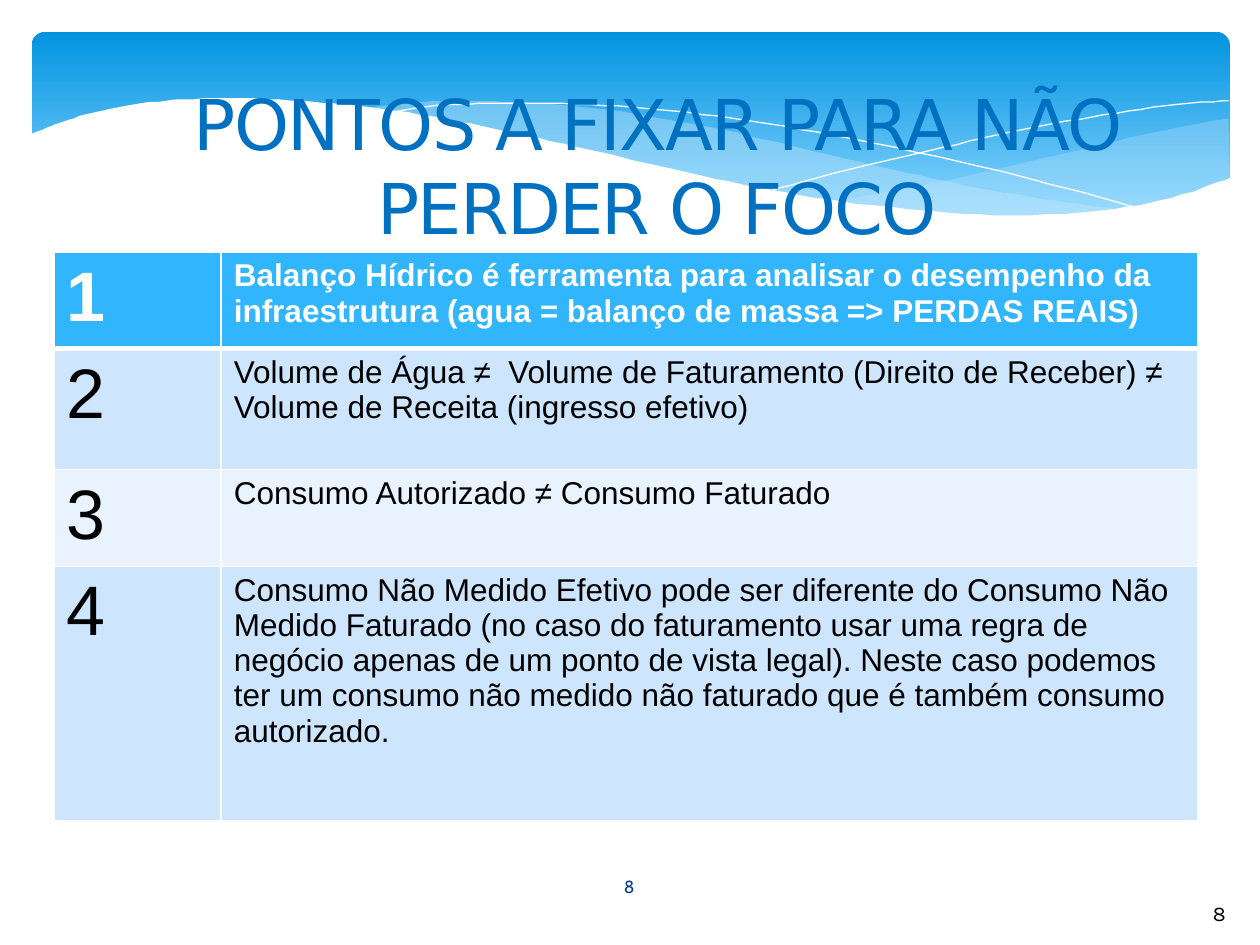
from dataclasses import dataclass
from lxml import etree
from pptx import Presentation
from pptx import util as u
from pptx.dml.color import RGBColor
from pptx.enum import shapes, text
from pptx.oxml import ns


@dataclass(frozen=True)
class Theme:
    white: str = "FFFFFF"
    black: str = "000000"
    title: str = "0070C0"
    navy: str = "073E87"
    deep: str = "0293E0"
    sky: str = "83D3FE"
    mist: str = "C6E7FC"
    head: str = "31B6FD"
    bands: tuple = ("CEE5FE", "E8F3FF")
    big: int = 40
    body: int = 18
    page: int = 12
    foot: int = 10


T = Theme()
UNIT = 0.0254  # wave points are hundredths of an inch, in cm

# Each wave is a list of curves, each curve a list of knots
BACK = [
    [(975, 94), (921, 104), (861, 118), (779, 137), (706, 152), (661, 160)],
    [(661, 160), (719, 167), (781, 172), (835, 172), (889, 166),
     (942, 154), (976, 141)],
]
FRONT = [
    [(893, 167), (837, 159), (775, 149), (706, 134), (629, 116), (569, 102),
     (502, 90), (442, 83), (380, 80), (328, 81), (286, 86)],
    [(286, 86), (342, 94), (404, 106), (449, 116), (530, 135), (601, 150),
     (665, 161), (722, 168), (785, 172), (838, 172), (893, 167)],
]
FALL = [[(309, 90), (344, 84), (401, 82), (469, 83), (533, 88), (608, 98),
         (695, 114), (795, 136), (907, 166)]]
RISE = [[(613, 151), (672, 135), (748, 117), (806, 104), (866, 93),
         (924, 84), (975, 80)]]
COVER = [
    [(977, 141), (930, 157), (875, 167), (809, 171), (744, 168), (668, 160),
     (603, 149), (529, 133), (447, 114), (391, 102), (340, 92), (292, 85),
     (250, 81), (193, 78), (146, 79), (106, 83), (76, 89), (52, 96),
     (36, 102), (23, 107)],
    [(23, 107), (23, 224)],
    [(23, 224), (977, 224)],
]

ROWS = [
    (1.9, "Balanço Hídrico é ferramenta para analisar o desempenho da "
          "infraestrutura (agua = balanço de massa => PERDAS REAIS)"),
    (2.44, "Volume de Água ≠  Volume de Faturamento (Direito de Receber) ≠ "
           "Volume de Receita (ingresso efetivo)"),
    (1.83, "Consumo Autorizado ≠ Consumo Faturado"),
    (5.13, "Consumo Não Medido Efetivo pode ser diferente do Consumo Não "
           "Medido Faturado (no caso do faturamento usar uma regra de negócio "
           "apenas de um ponto de vista legal). Neste caso podemos ter um "
           "consumo não medido não faturado que é também consumo autorizado."),
]


def rgb(code):
    return RGBColor.from_string(code)


def put(item, vals):
    for name, val in vals.items():
        setattr(item, name, val)


def place(*box):
    return [u.Cm(n) for n in box]


def write(frame, words, size, face, color, align, bold=False):
    para = frame.paragraphs[0]
    para.alignment = align
    run = para.add_run()
    run.text = words
    put(run.font, {"size": u.Pt(size), "name": face, "bold": bold})
    run.font.color.rgb = rgb(color)
    return run


def smooth(knots, steps=6):
    """Sample a Catmull-Rom curve through the knots."""
    ends = [knots[0], *knots, knots[-1]]
    dots = [knots[0]]
    for a, b, c, d in zip(ends, ends[1:], ends[2:], ends[3:]):
        for i in range(1, steps + 1):
            t = i / steps
            dots.append(tuple(
                0.5 * (2 * q + (r - p) * t
                       + (2 * p - 5 * q + 4 * r - s) * t ** 2
                       + (3 * q - p - 3 * r + s) * t ** 3)
                for p, q, r, s in zip(a, b, c, d)))
    return dots


def wave(slide, curves, fill=None, alpha=100):
    """Draw a filled wave, or a white hairline when no fill is given."""
    dots = [dot for knots in curves for dot in smooth(knots)]
    pen = slide.shapes.build_freeform(*dots[0], scale=u.Cm(UNIT))
    pen.add_line_segments(dots[1:], close=fill is not None)
    shape = pen.convert_to_shape()
    shape.shadow.inherit = False
    if fill is None:
        shape.fill.background()
        shape.line.color.rgb = rgb(T.white)
        shape.line.width = u.Pt(0)
        return
    shape.line.fill.background()
    shape.fill.solid()
    shape.fill.fore_color.rgb = rgb(fill)
    if alpha < 100:
        color = shape.fill._xPr.find(".//" + ns.qn("a:srgbClr"))
        etree.SubElement(color, ns.qn("a:alpha"), val=str(alpha * 1000))


def banner(slide):
    shape = slide.shapes.add_shape(
        shapes.MSO_SHAPE.ROUNDED_RECTANGLE, *place(0.64, 0.64, 24.15, 3.96))
    shape.adjustments[0] = 0.07
    shape.shadow.inherit = False
    shape.line.fill.background()
    shape.fill.gradient()
    shape.fill.gradient_angle = 270
    stops = zip(shape.fill.gradient_stops, (T.deep, T.sky), (0, 0.9))
    for stop, color, spot in stops:
        stop.color.rgb = rgb(color)
        stop.position = spot


def heading(slide, words):
    title = slide.shapes.title
    slide.shapes._spTree.append(title._element)  # bring above the waves
    put(title, dict(zip(("left", "top", "width", "height"),
                        place(1.09, 1.55, 24.31, 3.53))))
    put(title.text_frame, {"word_wrap": True,
                           "auto_size": text.MSO_AUTO_SIZE.NONE,
                           "vertical_anchor": text.MSO_ANCHOR.MIDDLE})
    run = write(title.text_frame, words, T.big, "DejaVu Sans", T.title,
                text.PP_ALIGN.CENTER)
    run.font._element.set("spc", "-100")


def number(slide, box, size, face, color, align, right=0.25):
    frame = slide.shapes.add_textbox(*place(*box)).text_frame
    put(frame, {"word_wrap": True, "margin_right": u.Cm(right),
                "vertical_anchor": text.MSO_ANCHOR.MIDDLE})
    write(frame, "8", size, face, color, align)


def border(cell, **widths):
    props = cell._tc.get_or_add_tcPr()
    for side in "LRTB":
        line = etree.SubElement(props, ns.qn(f"a:ln{side}"),
                                w=str(u.Pt(widths.get(side, 1))))
        fill = etree.SubElement(line, ns.qn("a:solidFill"))
        etree.SubElement(fill, ns.qn("a:srgbClr"), val=T.white)


def grid(slide):
    high = sum(row[0] for row in ROWS)
    table = slide.shapes.add_table(
        len(ROWS), 2, *place(1.09, 5.08, 23.05, high)).table
    for col, wide in zip(table.columns, (3.37, 19.68)):
        col.width = u.Cm(wide)
    for i, (tall, words) in enumerate(ROWS):
        table.rows[i].height = u.Cm(tall)
        top = i == 0
        edge = {0: {"B": 3}, 1: {"T": 3}}.get(i, {})
        pairs = ((str(i + 1), T.big), (words, T.body))
        for cell, (words, size) in zip(table.rows[i].cells, pairs):
            border(cell, **edge)
            cell.fill.solid()
            cell.fill.fore_color.rgb = rgb(T.head if top else T.bands[(i - 1) % 2])
            write(cell.text_frame, words, size, "Arial",
                  T.white if top else T.black, text.PP_ALIGN.LEFT, top)


def main():
    deck = Presentation()
    put(deck, {"slide_width": u.Cm(25.4), "slide_height": u.Cm(19.05)})
    slide = deck.slides.add_slide(deck.slide_layouts[5])
    banner(slide)
    wave(slide, BACK, T.mist, 29)
    wave(slide, FRONT, T.mist, 40)
    wave(slide, FALL)
    wave(slide, RISE)
    wave(slide, COVER, T.white)
    number(slide, (23.8, 17.78, 1.6, 1.27), T.page, "Karla", T.black,
           text.PP_ALIGN.RIGHT, 0.69)
    heading(slide, "PONTOS A FIXAR PARA NÃO PERDER O FOCO")
    number(slide, (11.07, 17.37, 3.23, 1.02), T.foot, "Cabin", T.navy,
           text.PP_ALIGN.CENTER)
    grid(slide)
    deck.save("out.pptx")


if __name__ == "__main__":
    main()
